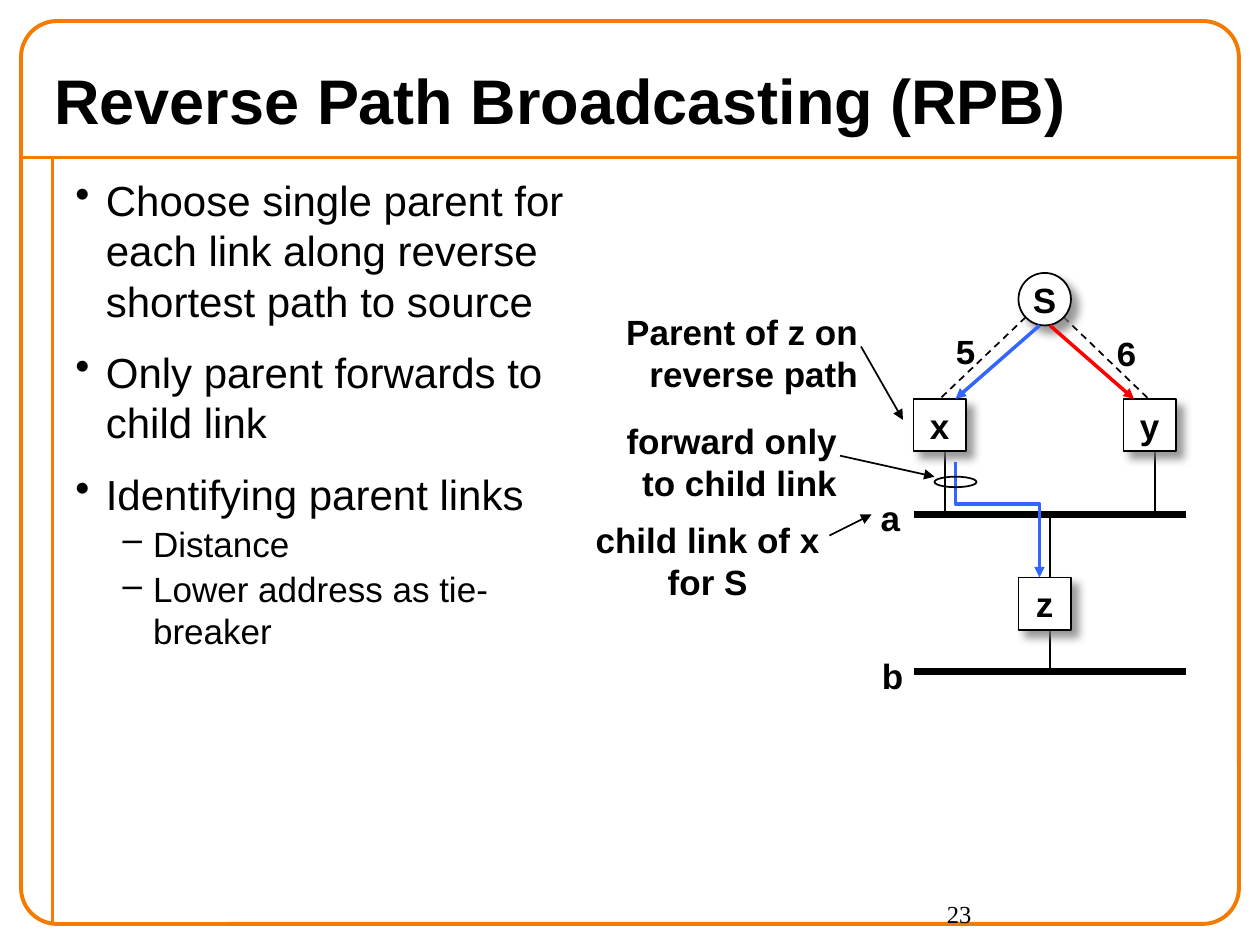
from dataclasses import dataclass

from lxml.etree import SubElement
from pptx import Presentation
from pptx.dml.color import RGBColor
from pptx.enum.dml import MSO_LINE as Dash
from pptx.enum.shapes import MSO_CONNECTOR as Connector, MSO_SHAPE as Preset
from pptx.enum.text import MSO_ANCHOR as Anchor, MSO_AUTO_SIZE as AutoSize, PP_ALIGN as Align
from pptx.oxml.ns import qn
from pptx.util import Pt

PX = 7620  # EMU per px, 120 px to the inch
BLACK = RGBColor(0x00, 0x00, 0x00)
WHITE = RGBColor(0xFF, 0xFF, 0xFF)
ORANGE = RGBColor(0xF4, 0x7A, 0x00)
BLUE = RGBColor(0x33, 0x66, 0xFF)
RED = RGBColor(0xFF, 0x00, 0x00)
NODE_SIZE = 50


@dataclass
class Line:
    x1: int
    y1: int
    x2: int
    y2: int
    color: RGBColor = BLACK
    width: float = 1
    arrow: bool = False
    dashed: bool = False


@dataclass
class Node:
    name: str
    left: int
    top: int
    preset: Preset = Preset.RECTANGLE


@dataclass
class Label:
    lines: list[str]
    left: int
    top: int
    width: int
    height: int
    align: Align = Align.CENTER
    font: str = "Arial"


@dataclass
class Bullet:
    text: str
    level: int = 0


def set_font(para, size: float, bold: bool = False, name: str = "Arial") -> None:
    font = para.font
    font.size, font.bold, font.name = Pt(size), bold, name
    font.color.rgb = BLACK


def add_arrowhead(shape) -> None:
    SubElement(shape.line._get_or_add_ln(), qn("a:tailEnd"), type="triangle")


def draw_line(page, line: Line) -> None:
    ends = (line.x1, line.y1, line.x2, line.y2)
    connector = page.shapes.add_connector(Connector.STRAIGHT, *(v * PX for v in ends))
    connector.line.color.rgb = line.color
    connector.line.width = Pt(line.width)
    if line.dashed:
        connector.line.dash_style = Dash.DASH
    if line.arrow:
        add_arrowhead(connector)
    SubElement(connector._element.spPr, qn("a:effectLst"))


def draw_outline(page, preset: Preset, left: int, top: int, width: int, height: int,
                 color: RGBColor, weight: float):
    shape = page.shapes.add_shape(preset, left * PX, top * PX, width * PX, height * PX)
    shape.shadow.inherit = False
    shape.fill.background()
    shape.line.color.rgb = color
    shape.line.width = Pt(weight)
    return shape


def draw_node(page, node: Node) -> None:
    shape = draw_outline(page, node.preset, node.left, node.top, NODE_SIZE, NODE_SIZE, BLACK, 1)
    shape.fill.solid()
    shape.fill.fore_color.rgb = WHITE
    effects = shape._element.spPr.find(qn("a:effectLst"))
    shadow = SubElement(effects, qn("a:outerShdw"), blurRad=str(Pt(5)), dist=str(Pt(5.7)),
                        dir="2700000", algn="ctr", rotWithShape="0")
    tint = SubElement(shadow, qn("a:srgbClr"), val="777777")
    SubElement(tint, qn("a:alpha"), val="75000")
    frame = shape.text_frame
    frame.word_wrap = False
    frame.vertical_anchor = Anchor.MIDDLE
    para = frame.paragraphs[0]
    para.text, para.alignment = node.name, Align.CENTER
    set_font(para, 20, bold=True)


def add_box(page, left: int, top: int, width: int, height: int, lines: list[str],
            wrap: bool = True):
    box = page.shapes.add_textbox(left * PX, top * PX, width * PX, height * PX)
    frame = box.text_frame
    frame.word_wrap = wrap
    frame.text = "\n".join(lines)
    return frame


def draw_label(page, label: Label) -> None:
    frame = add_box(page, label.left, label.top, label.width, label.height, label.lines, wrap=False)
    frame.auto_size = AutoSize.SHAPE_TO_FIT_TEXT
    for para in frame.paragraphs:
        para.alignment = label.align
        set_font(para, 20, bold=True, name=label.font)


def draw_bullets(page, bullets: list[Bullet]) -> None:
    frame = add_box(page, 60, 160, 520, 740, [bullet.text for bullet in bullets])
    for para, bullet in zip(frame.paragraphs, bullets):
        size, gap, indent, mark = ((24, 12, 29, "•"), (20, 2, 74, "–"))[bullet.level]
        para.level = bullet.level
        para.space_before = Pt(gap)
        set_font(para, size)
        props = para._p.get_or_add_pPr()
        props.set("marL", str(indent * PX))
        props.set("indent", str(-29 * PX))
        mark_element = props.makeelement(qn("a:buChar"), {"char": mark})
        props.find(qn("a:defRPr")).addprevious(mark_element)


FRAME_LINES = [Line(20, 150, 1180, 150, ORANGE, 2.25), Line(50, 150, 50, 880, ORANGE, 2.25)]
NODES = [Node("x", 870, 380), Node("y", 1070, 380), Node("z", 970, 550),
         Node("S", 970, 260, Preset.OVAL)]
LINKS = [
    Line(1000, 600, 1000, 640),
    Line(1100, 430, 1100, 490),
    Line(900, 430, 900, 490),
    Line(1000, 490, 1000, 550),
    Line(870, 490, 1130, 490, width=4),
    Line(870, 640, 1130, 640, width=4),
    Line(977, 302, 895, 380, dashed=True),
    Line(1013, 302, 1094, 380, dashed=True),
]
ARROWS = [
    Line(990, 310, 910, 380, BLUE, 2, arrow=True),
    Line(1000, 310, 1080, 380, RED, 2, arrow=True),
    Line(790, 510, 830, 490, arrow=True),
    Line(800, 434, 890, 454, arrow=True),
    Line(820, 330, 860, 400, arrow=True),
]
LABELS = [
    Label(["a"], 826, 467, 44, 52),
    Label(["b"], 828, 617, 44, 52),
    Label(["5"], 898, 308, 38, 43, Align.RIGHT, "Courier New"),
    Label(["6"], 1051, 310, 38, 43, Align.RIGHT, "Courier New"),
    Label(["child link of x", "for S"], 554, 488, 240, 92),
    Label(["forward only", "to child link"], 581, 394, 228, 92, Align.RIGHT),
    Label(["Parent of z on", "reverse path"], 583, 290, 246, 92, Align.RIGHT),
]
FORWARD_ROUTE = [(910, 440), (910, 480), (990, 480), (990, 550)]
BULLETS = [
    Bullet("Choose single parent for each link along reverse shortest path to source"),
    Bullet("Only parent forwards to child link"),
    Bullet("Identifying parent links"),
    Bullet("Distance", 1),
    Bullet("Lower address as tie-breaker", 1),
]


def main() -> None:
    deck = Presentation()
    deck.slide_width, deck.slide_height = 1200 * PX, 900 * PX
    page = deck.slides.add_slide(deck.slide_layouts[6])

    # Page frame, number and title
    for line in FRAME_LINES:
        draw_line(page, line)
    border = draw_outline(page, Preset.ROUNDED_RECTANGLE, 20, 20, 1160, 860, ORANGE, 2.25)
    border.adjustments[0] = 0.04
    number = add_box(page, 890, 850, 250, 60, ["23"])
    set_font(number.paragraphs[0], 14, name="Times New Roman")
    title = add_box(page, 40, 50, 1160, 90, ["Reverse Path Broadcasting (RPB)"])
    title.vertical_anchor = Anchor.MIDDLE
    set_font(title.paragraphs[0], 36, bold=True)

    # Network: links lie behind the nodes
    for link in LINKS:
        draw_line(page, link)
    for node in NODES:
        draw_node(page, node)
    for label in LABELS:
        draw_label(page, label)

    # Forwarding route from x to z, and the arrows
    builder = page.shapes.build_freeform(*FORWARD_ROUTE[0], scale=PX)
    builder.add_line_segments(FORWARD_ROUTE[1:], close=False)
    route = builder.convert_to_shape()
    route.shadow.inherit = False
    route.fill.background()
    route.line.color.rgb = BLUE
    route.line.width = Pt(2)
    add_arrowhead(route)
    draw_outline(page, Preset.OVAL, 890, 454, 40, 10, BLACK, 1)
    for arrow in ARROWS:
        draw_line(page, arrow)

    draw_bullets(page, BULLETS)
    deck.save("out.pptx")


if __name__ == "__main__":
    main()
